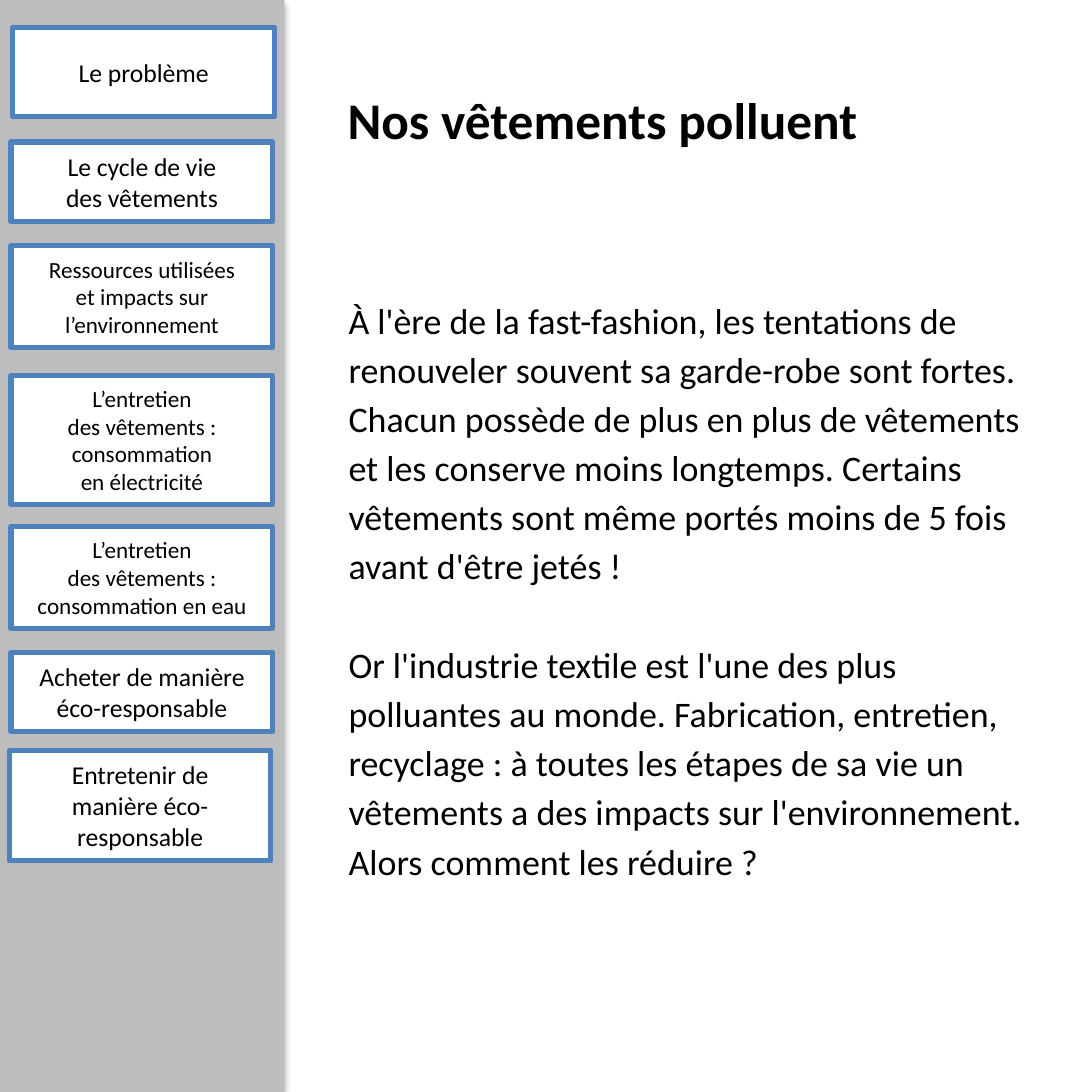
from lxml.etree import SubElement
from pptx import Presentation
from pptx.dml.color import RGBColor
from pptx.enum.shapes import MSO_SHAPE
from pptx.enum.text import MSO_ANCHOR, MSO_AUTO_SIZE, PP_ALIGN
from pptx.oxml.ns import qn
from pptx.util import Pt

SIDE = 425.5
SIDEBAR_WIDTH = 110.9


def color(value):
    return RGBColor.from_string(value)


def write(shape, text, size, bold=False, frame_format=None, paragraph_format=None):
    """Fill a shape with unbulleted paragraphs in one style."""
    frame = shape.text_frame
    frame.text = text
    settings = {"word_wrap": True, "auto_size": MSO_AUTO_SIZE.NONE, **(frame_format or {})}
    for name, value in settings.items():
        setattr(frame, name, value)
    for paragraph in frame.paragraphs:
        properties = paragraph._p.get_or_add_pPr()
        properties.set("marL", "0")
        properties.set("indent", "0")
        SubElement(properties, qn("a:buNone"))
        for name, value in {"space_before": Pt(0), **(paragraph_format or {})}.items():
            setattr(paragraph, name, value)
        for run in paragraph.runs:
            for name, value in {"name": "Calibri", "size": Pt(size), "bold": bold}.items():
                setattr(run.font, name, value)
            run.font.color.rgb = color("000000")


presentation = Presentation()
presentation.slide_width = presentation.slide_height = Pt(SIDE)
slide = presentation.slides.add_slide(presentation.slide_layouts[1])
title, body = slide.placeholders

# Grey sidebar with a soft shadow
sidebar = slide.shapes.add_shape(MSO_SHAPE.RECTANGLE, Pt(0), Pt(0), Pt(SIDEBAR_WIDTH), Pt(SIDE))
sidebar.shadow.inherit = False
sidebar.fill.solid()
sidebar.fill.fore_color.rgb = color("BDBDBD")
sidebar.line.fill.background()
effects = sidebar._element.spPr.find(qn("a:effectLst"))
shadow = SubElement(effects, qn("a:outerShdw"), blurRad=str(Pt(3.1)), dist=str(Pt(1.6)),
                    dir="5400000", rotWithShape="0")
shadow_color = SubElement(shadow, qn("a:srgbClr"), val="000000")
SubElement(shadow_color, qn("a:alpha"), val="38000")

# Navigation buttons: label, left, top, height, text size
buttons = [
    ("Le problème", 5, 10.8, 34.6, 10),
    ("Le cycle de vie\ndes vêtements", 4.3, 55.4, 31, 10),
    ("Ressources utilisées\net impacts sur l’environnement", 4.3, 95.8, 39.6, 9),
    ("L’entretien\ndes vêtements :\nconsommation\nen électricité", 4.3, 146.2, 50.4, 9),
    ("L’entretien\ndes vêtements :\nconsommation en eau", 4.3, 205.2, 39.6, 9),
    ("Acheter de manière éco-responsable", 4.3, 254.2, 31, 10),
    ("Entretenir de manière éco-responsable", 3.6, 292.3, 43.2, 10),
]
for label, left, top, height, size in buttons:
    button = slide.shapes.add_shape(MSO_SHAPE.RECTANGLE, Pt(left), Pt(top), Pt(102), Pt(height))
    button.shadow.inherit = False
    button.fill.solid()
    button.fill.fore_color.rgb = color("FFFFFF")
    button.line.color.rgb = color("4F81BD")
    button.line.width = Pt(2)
    write(button, label, size, frame_format={"vertical_anchor": MSO_ANCHOR.MIDDLE},
          paragraph_format={"alignment": PP_ALIGN.CENTER})

# Title
title_box = {"left": Pt(135.4), "top": Pt(33.8), "width": Pt(275.8), "height": Pt(24.5)}
for name, value in title_box.items():
    setattr(title, name, value)
margins = {"margin_left": 0, "margin_top": Pt(0.7), "margin_right": 0, "margin_bottom": 0}
write(title, "Nos vêtements polluent", 20, bold=True,
      frame_format={"vertical_anchor": MSO_ANCHOR.TOP, **margins},
      paragraph_format={"alignment": PP_ALIGN.LEFT})

# Body text
body_box = {"left": Pt(128.6), "top": Pt(110.2), "width": Pt(282.2), "height": Pt(239)}
for name, value in body_box.items():
    setattr(body, name, value)
body_text = (
    "À l'ère de la fast-fashion, les tentations de renouveler souvent sa garde-robe sont fortes. "
    "Chacun possède de plus en plus de vêtements et les conserve moins longtemps. "
    "Certains vêtements sont même portés moins de 5 fois avant d'être jetés !\n"
    "Or l'industrie textile est l'une des plus polluantes au monde. "
    "Fabrication, entretien, recyclage : à toutes les étapes de sa vie un vêtements a des impacts "
    "sur l'environnement. Alors comment les réduire ?"
)
write(body, body_text, 14, frame_format={"vertical_anchor": MSO_ANCHOR.TOP},
      paragraph_format={"line_spacing": 1.14})
body.text_frame.paragraphs[1].space_before = Pt(19.2)

presentation.save("out.pptx")
